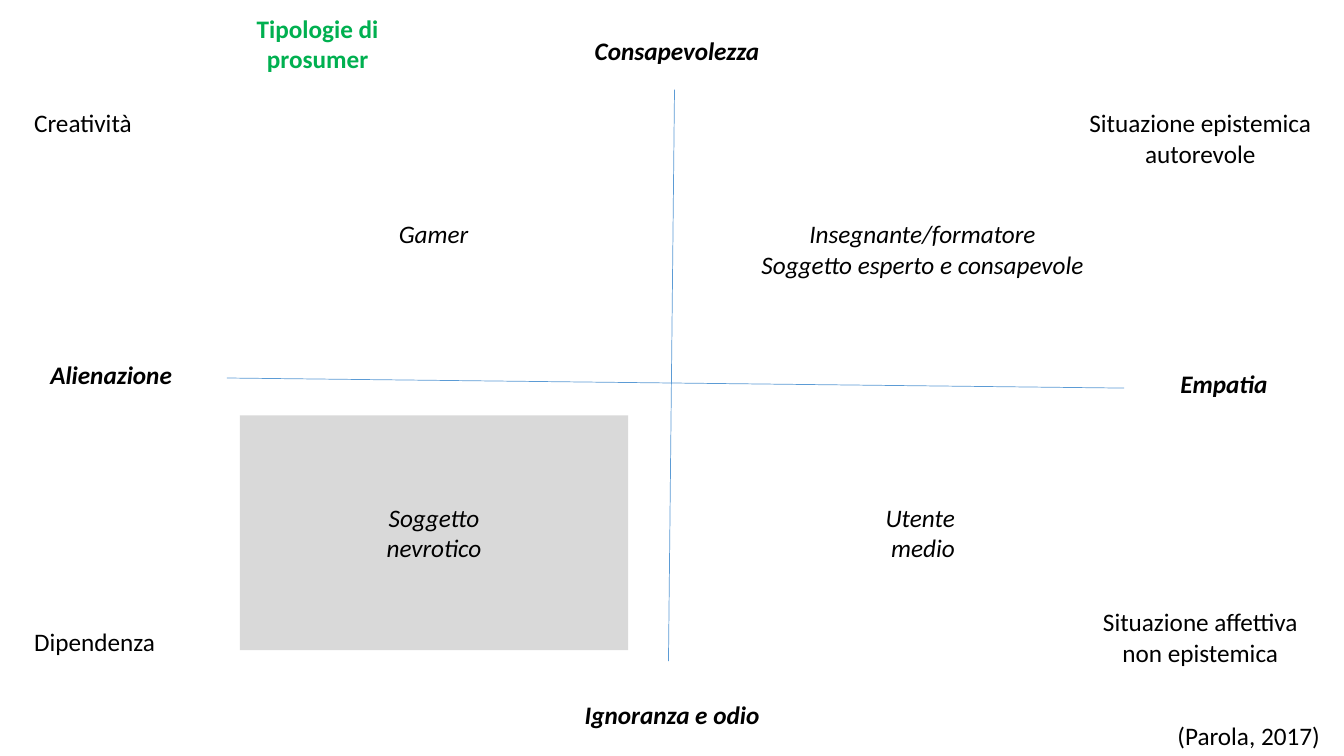
from pptx import Presentation
from pptx.dml.color import RGBColor
from pptx.enum.shapes import MSO_CONNECTOR, MSO_SHAPE
from pptx.enum.text import MSO_AUTO_SIZE, PP_ALIGN
from pptx.oxml.ns import qn
from pptx.util import Pt
from lxml import etree

LINE = MSO_CONNECTOR.STRAIGHT
RECT = MSO_SHAPE.RECTANGLE
GROW = MSO_AUTO_SIZE.SHAPE_TO_FIT_TEXT
LEFT, MID = PP_ALIGN.LEFT, PP_ALIGN.CENTER

PX = 9144  # 100 px to the inch


def color(text):
    return RGBColor.from_string(text)


class Board:
    font, size = "Calibri", 18
    ink, green, blue, gray = "000000", "00B050", "5B9BD5", "D9D9D9"

    def __init__(self, deck):
        self.slide = deck.slides.add_slide(deck.slide_layouts[6])

    def axis(self, *ends):
        line = self.slide.shapes.add_connector(LINE, *[v * PX for v in ends])
        line.line.color.rgb = color(self.blue)
        line.line.width = Pt(0.5)
        etree.SubElement(line._element.spPr, qn("a:effectLst"))

    def panel(self, *place):
        rect = self.slide.shapes.add_shape(RECT, *[v * PX for v in place])
        rect.shadow.inherit = False
        rect.fill.solid()
        rect.fill.fore_color.rgb = color(self.gray)
        rect.line.fill.background()

    def label(self, x, y, wide, *lines, align=MID, bold=False, slant=False, ink=ink):
        """Place one paragraph per line; the height follows their number."""
        high = 40 if len(lines) == 1 else 71
        box = self.slide.shapes.add_textbox(x * PX, y * PX, wide * PX, high * PX)
        frame = box.text_frame
        frame.word_wrap = False
        frame.auto_size = GROW
        frame.text = "\n".join(lines)
        for par in frame.paragraphs:
            par.alignment = align
            font = par.font
            font.name, font.size = self.font, Pt(self.size)
            font.bold, font.italic = bold, slant
            font.color.rgb = color(ink)


def main():
    deck = Presentation()
    deck.slide_width, deck.slide_height = 1333 * PX, 750 * PX
    board = Board(deck)

    board.axis(669, 89, 663, 656)
    board.axis(225, 375, 1115, 385)
    board.panel(238, 412, 385, 233)

    poles = [
        (580, 30, 185, "Consapevolezza"),
        (570, 689, 195, "Ignoranza e odio"),
        (40, 352, 142, "Alienazione"),
        (1161, 360, 108, "Empatia"),
    ]
    for pole in poles:
        board.label(*pole, align=LEFT, bold=True, slant=True)

    types = [
        (385, 212, 90, "Gamer"),
        (373, 493, 115, "Soggetto", "nevrotico"),
        (743, 212, 344, "Insegnante/formatore", "Soggetto esperto e consapevole"),
        (868, 493, 95, "Utente ", "medio"),
    ]
    for kind in types:
        board.label(*kind, slant=True)

    board.label(24, 102, 118, "Creatività", align=LEFT)
    board.label(1069, 102, 243, "Situazione epistemica", "autorevole")
    board.label(24, 616, 142, "Dipendenza", align=LEFT)
    board.label(1082, 597, 217, "Situazione affettiva", "non epistemica")

    board.label(244, 8, 142, "Tipologie di", "prosumer", bold=True, ink=board.green)
    board.label(1158, 710, 163, "(Parola, 2017)", align=LEFT)

    deck.save("out.pptx")


if __name__ == "__main__":
    main()
